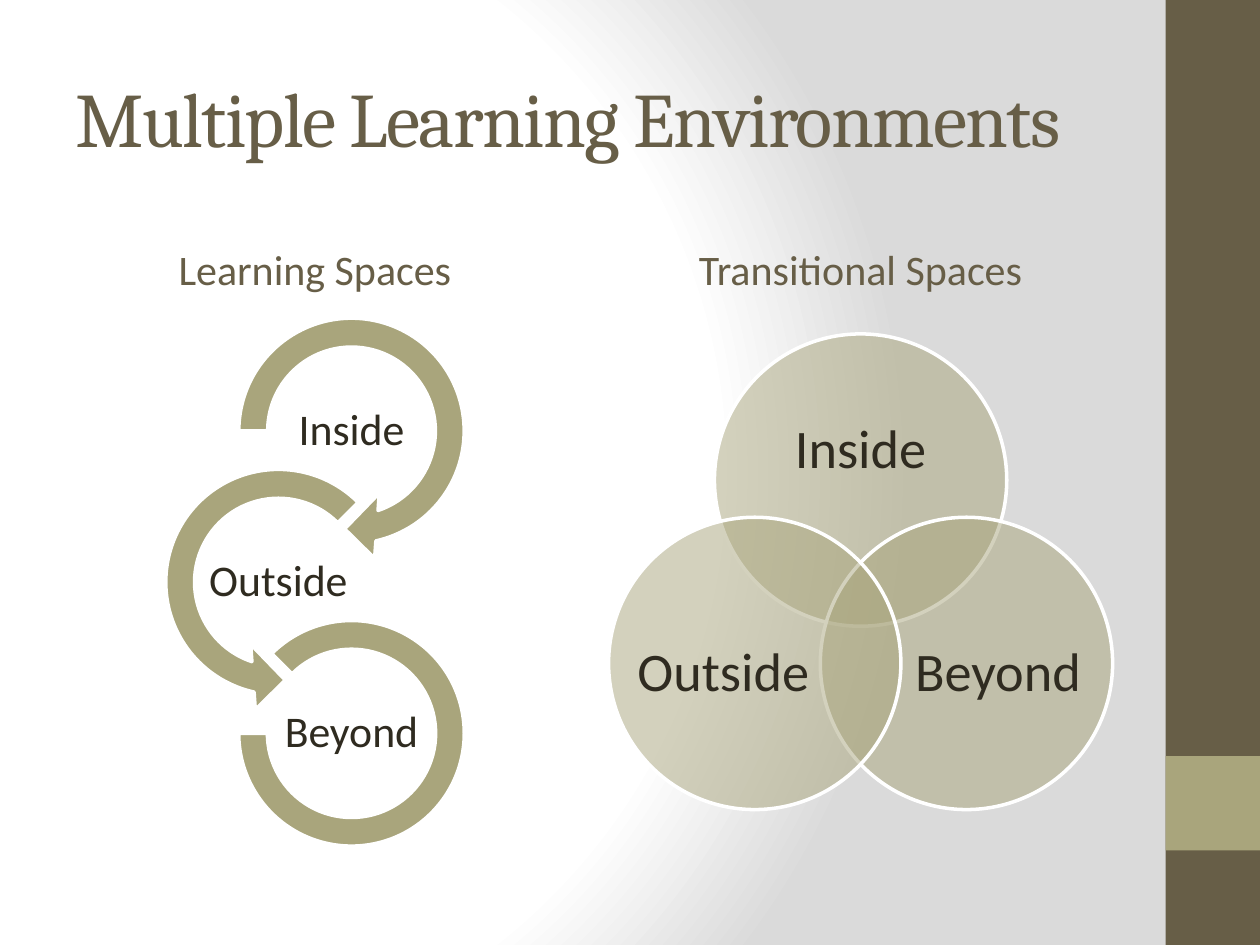
import math

import pptx
import pptx.dml.color
import pptx.enum.shapes
import pptx.enum.text
import pptx.oxml
import pptx.oxml.ns
import pptx.util

Inches, Pt = pptx.util.Inches, pptx.util.Pt
SHAPE = pptx.enum.shapes.MSO_SHAPE
ALIGN = pptx.enum.text.PP_ALIGN
ANCHOR = pptx.enum.text.MSO_ANCHOR

# Content
TITLE = "Multiple Learning Environments"
HEADINGS = {1: ("Learning Spaces", 0.5), 3: ("Transitional Spaces", 4.83)}
# label, shape, size, centre x, adjustments
CHAIN = [
    ("Inside", SHAPE.CIRCULAR_ARROW, 2.08, 2.79, (0.11, 11.42, 45, 108, 0.125)),
    ("Outside", SHAPE.LEFT_CIRCULAR_ARROW, 2.08, 2.21, (0.11, 11.42, 63, 189, 0.125)),
    ("Beyond", SHAPE.BLOCK_ARC, 1.79, 2.79, (135, 108, 0.127)),
]
# label, angle round the middle, label offset from circle centre, label size
VENN = [
    ("Inside", -90, (0, -0.23), (1.7, 1.05)),
    ("Beyond", 30, (0.25, 0.08), (1.39, 1.28)),
    ("Outside", 150, (-0.25, 0.08), (1.39, 1.28)),
]
COLORS = {"brown": "675E47", "olive": "A9A57C", "ink": "2F2B20",
          "white": "FFFFFF", "grey": "DADADA"}

# Layout, in inches
WIDTH, HEIGHT = 10, 7.5
BAND = 0.75
CHAIN_TOP, CHAIN_STEP = 3.42, 1.2
VENN_X, VENN_Y, VENN_REACH, VENN_SIZE = 6.83, 4.78, 0.97, 2.32


def rgb(name):
    return pptx.dml.color.RGBColor.from_string(COLORS[name])


def place(shape, left, top, width, height):
    box = {"left": left, "top": top, "width": width, "height": height}
    for side, value in box.items():
        setattr(shape, side, Inches(value))


def write(shape, text, size, color, font, anchor, align, inset=None):
    frame = shape.text_frame
    frame.text = text
    frame.word_wrap = True
    frame.auto_size = pptx.enum.text.MSO_AUTO_SIZE.NONE
    frame.vertical_anchor = anchor
    if inset is not None:
        for side in ("left", "top", "right", "bottom"):
            setattr(frame, f"margin_{side}", Inches(inset))
    paragraph = frame.paragraphs[0]
    paragraph.alignment = align
    run = paragraph.runs[0]
    for key, value in {"size": Pt(size), "name": font, "bold": False}.items():
        setattr(run.font, key, value)
    run.font.color.rgb = rgb(color)
    return paragraph


def add_figure(shapes, kind, box, fill, outlined=True):
    figure = shapes.add_shape(kind, *map(Inches, box))
    figure.shadow.inherit = False
    figure.fill.solid()
    figure.fill.fore_color.rgb = rgb(fill)
    if outlined:
        figure.line.color.rgb = rgb("white")
        figure.line.width = Pt(2)
    else:
        figure.line.fill.background()
    return figure


def centred(x, y, width, height):
    return x - width / 2, y - height / 2, width, height


def add_label(shapes, text, box, size, inset):
    label = shapes.add_textbox(*map(Inches, box))
    paragraph = write(label, text, size, "ink", "Calibri", ANCHOR.MIDDLE,
                      ALIGN.CENTER, inset)
    paragraph.line_spacing = 0.9
    paragraph.space_after = Pt(round(size * 0.35))


def set_background(slide):
    stops = "".join(
        f'<a:gs pos="{share * 1000}"><a:srgbClr val="{COLORS[name]}"/></a:gs>'
        for share, name in ((0, "white"), (75, "white"), (100, "grey")))
    background = pptx.oxml.parse_xml(
        f'<p:bg {pptx.oxml.ns.nsdecls("p", "a")}><p:bgPr>'
        f'<a:gradFill rotWithShape="1"><a:gsLst>{stops}</a:gsLst>'
        '<a:path path="circle">'
        '<a:fillToRect l="20000" t="50000" r="100000" b="50000"/></a:path>'
        '</a:gradFill><a:effectLst/></p:bgPr></p:bg>')
    slide.element.cSld.insert(0, background)


def add_chain(slide):
    shapes = slide.shapes.add_group_shape().shapes
    for row, (text, kind, size, x, adjustments) in enumerate(CHAIN):
        y = CHAIN_TOP + row * CHAIN_STEP
        arc = add_figure(shapes, kind, centred(x, y, size, size), "olive")
        for index, value in enumerate(adjustments):
            arc.adjustments[index] = value
        add_label(shapes, text, centred(x, y, 1.16, 0.58), 25, 0.02)


def add_venn(slide):
    shapes = slide.shapes.add_group_shape().shapes
    for text, angle, (dx, dy), label_size in VENN:
        x = VENN_X + VENN_REACH * math.cos(math.radians(angle))
        y = VENN_Y + VENN_REACH * math.sin(math.radians(angle))
        circle = add_figure(shapes, SHAPE.OVAL,
                            centred(x, y, VENN_SIZE, VENN_SIZE), "olive")
        # Half-transparent fill
        color = circle.fill._xPr.find(".//" + pptx.oxml.ns.qn("a:srgbClr"))
        color.append(pptx.oxml.parse_xml(
            f'<a:alpha {pptx.oxml.ns.nsdecls("a")} val="50000"/>'))
        add_label(shapes, text, centred(x + dx, y + dy, *label_size), 31, 0)


def main():
    deck = pptx.Presentation()
    deck.slide_width, deck.slide_height = Inches(WIDTH), Inches(HEIGHT)
    slide = deck.slides.add_slide(deck.slide_layouts.get_by_name("Comparison"))
    set_background(slide)

    # Title and column headings
    title = slide.shapes.title
    place(title, 0.5, 0.3, 8.33, 1.25)
    heading = write(title, TITLE, 44, "brown", "Cambria", ANCHOR.MIDDLE, ALIGN.LEFT)
    heading.runs[0].font._element.set("spc", "-100")
    for placeholder in list(slide.placeholders):
        index = placeholder.placeholder_format.idx
        if index in HEADINGS:
            text, left = HEADINGS[index]
            place(placeholder, left, 1.68, 4, 0.7)
            write(placeholder, text, 24, "brown", "Calibri", ANCHOR.BOTTOM, ALIGN.CENTER)
        elif index:
            placeholder.element.getparent().remove(placeholder.element)

    # Side band
    for top, height, fill in ((0, HEIGHT, "brown"), (6, BAND, "olive")):
        add_figure(slide.shapes, SHAPE.RECTANGLE,
                   (WIDTH - BAND, top, BAND, height), fill, outlined=False)

    add_chain(slide)
    add_venn(slide)
    deck.save("out.pptx")


if __name__ == "__main__":
    main()
